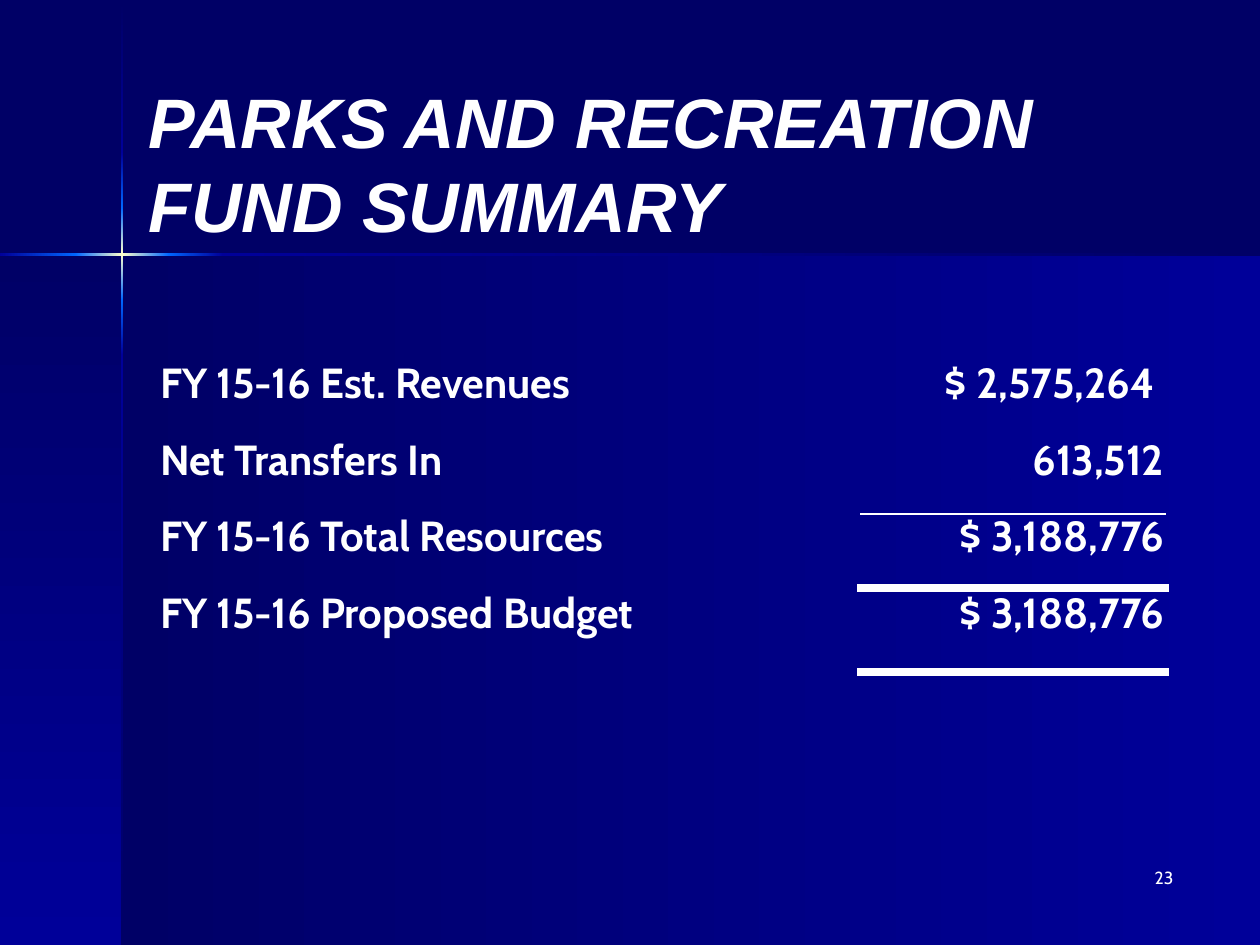
from copy import deepcopy

from lxml import etree
from pptx import Presentation
from pptx.dml.color import RGBColor
from pptx.enum.shapes import MSO_CONNECTOR as Connector, MSO_SHAPE as Shape
from pptx.enum.text import MSO_ANCHOR as Anchor, MSO_AUTO_SIZE as AutoSize, PP_ALIGN as Align
from pptx.oxml.ns import qn
from pptx.util import Inches, Pt

NAVY, BLUE, BRIGHT, GLOW, WHITE = "000066", "000099", "0066FF", "FFFFCC", "FFFFFF"
NO_TABLE_STYLE = "{2D5ABB26-0587-4C30-8999-92F81FD0307C}"
BAR = 0.02
BAR_LEFT, BAR_TOP = 0.96, 2.01

# Stretches of the crossing bars: start, end, gradient colours
VERTICAL_BAR = [
    (0.01, 1.21, (NAVY, BLUE)),
    (1.21, 1.65, (BLUE, BRIGHT)),
    (1.65, 2.38, (BRIGHT, GLOW, BRIGHT)),
    (2.38, 2.82, (BRIGHT, BLUE)),
    (2.82, 7.5, (BLUE, NAVY)),
]
HORIZONTAL_BAR = [
    (0, 0.61, (BLUE, BRIGHT)),
    (0.6, 1.34, (BRIGHT, GLOW, BRIGHT)),
    (1.33, 1.77, (BRIGHT, BLUE)),
    (1.77, 10, (BLUE, NAVY)),
]
FUND_LINES = [
    ("FY 15-16 Est. Revenues", "$ 2,575,264 "),
    ("Net Transfers In", "613,512"),
    ("FY 15-16 Total Resources", "$ 3,188,776"),
    ("FY 15-16 Proposed Budget", "$ 3,188,776"),
]
RULES = [(4.08, 1), (4.67, 4.5), (5.33, 4.5)]


def color(value):
    return RGBColor.from_string(value)


def inches(*lengths):
    return [Inches(length) for length in lengths]


def style(para, size, name, align=Align.LEFT, bold=False, italic=False):
    para.alignment = align
    font = para.font
    font.size, font.name, font.bold, font.italic = Pt(size), name, bold, italic
    font.color.rgb = color(WHITE)


def add_gradient_panel(slide, place, colors, downward=False):
    panel = slide.shapes.add_shape(Shape.RECTANGLE, *inches(*place))
    panel.shadow.inherit = False
    panel.line.fill.background()
    panel.fill.gradient()
    panel.fill.gradient_angle = 270 if downward else 0
    # A new gradient has two stops; a third is cloned when needed
    stop_list = panel._element.spPr.find(".//" + qn("a:gsLst"))
    for _ in colors[2:]:
        stop_list.append(deepcopy(stop_list[-1]))
    for index, (stop, value) in enumerate(zip(panel.fill.gradient_stops, colors)):
        stop.position = index / (len(colors) - 1)
        stop.color.rgb = color(value)


def add_backdrop(slide):
    slide.background.fill.solid()
    slide.background.fill.fore_color.rgb = color(NAVY)
    add_gradient_panel(slide, (0.97, 2.02, 9.03, 5.48), (NAVY, BLUE))
    add_gradient_panel(slide, (0, 2.02, 0.97, 5.48), (NAVY, BLUE), downward=True)
    for start, end, colors in VERTICAL_BAR:
        add_gradient_panel(slide, (BAR_LEFT, start, BAR, end - start), colors, downward=True)
    for start, end, colors in HORIZONTAL_BAR:
        add_gradient_panel(slide, (start, BAR_TOP, end - start, BAR), colors)


def set_title(slide, text):
    title = slide.shapes.title
    title.left, title.top, title.width, title.height = inches(1.08, 0.75, 8.25, 1.08)
    frame = title.text_frame
    frame.text = text
    frame.word_wrap = True
    frame.auto_size = AutoSize.NONE
    # The two lines are taller than the box and spread evenly past it
    frame.vertical_anchor = Anchor.MIDDLE
    style(frame.paragraphs[0], 40, "Arial", bold=True, italic=True)


def add_page_number(slide, number):
    box = slide.shapes.add_textbox(*inches(7.33, 6.83, 2.08, 0.5))
    box.text_frame.word_wrap = True
    box.text_frame.text = number
    style(box.text_frame.paragraphs[0], 10, "Cabin", Align.RIGHT)


def add_fund_table(slide):
    table_frame = slide.shapes.add_table(2, 2, *inches(1.17, 2.19, 8.17, 4.27))
    table = table_frame.table
    table.first_row = table.horz_banding = False
    table._tbl.tblPr.find(qn("a:tableStyleId")).text = NO_TABLE_STYLE
    for column, width in zip(table.columns, inches(5.19, 2.98)):
        column.width = width
    for row, height in zip(table.rows, inches(3.56, 0.71)):
        row.height = height
    for cell in table.iter_cells():
        cell.fill.background()
    # Labels on the left, amounts on the right
    for column, align in enumerate((Align.LEFT, Align.RIGHT)):
        cell = table.cell(0, column)
        cell.margin_top = Inches(0.45)
        cell.text = "\n".join(line[column] for line in FUND_LINES)
        for para in cell.text_frame.paragraphs:
            style(para, 24, "Cabin", align, bold=True)
            para.line_spacing = 1.5


def add_rule(slide, top, weight):
    rule = slide.shapes.add_connector(Connector.STRAIGHT, *inches(6.83, top, 9.25, top))
    rule.line.color.rgb = color(WHITE)
    rule.line.width = Pt(weight)
    rule._element.spPr.find(qn("a:ln")).set("cap", "sq")
    etree.SubElement(rule._element.spPr, qn("a:effectLst"))


def main():
    deck = Presentation()
    deck.slide_width, deck.slide_height = inches(10, 7.5)
    slide = deck.slides.add_slide(deck.slide_layouts[5])
    add_backdrop(slide)
    add_page_number(slide, "23")
    add_fund_table(slide)
    set_title(slide, "PARKS AND RECREATION FUND SUMMARY")
    for top, weight in RULES:
        add_rule(slide, top, weight)
    deck.save("out.pptx")


if __name__ == "__main__":
    main()
